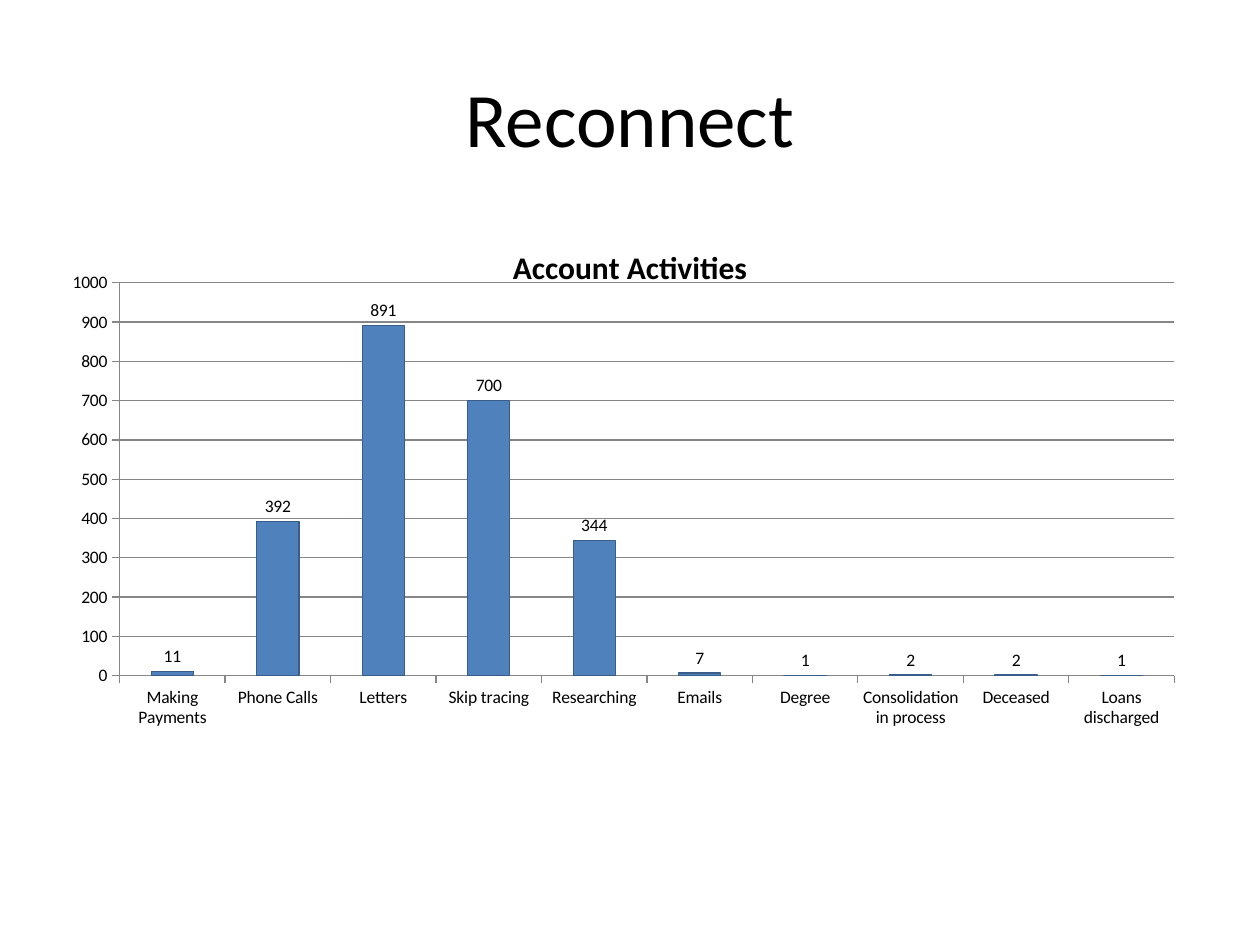
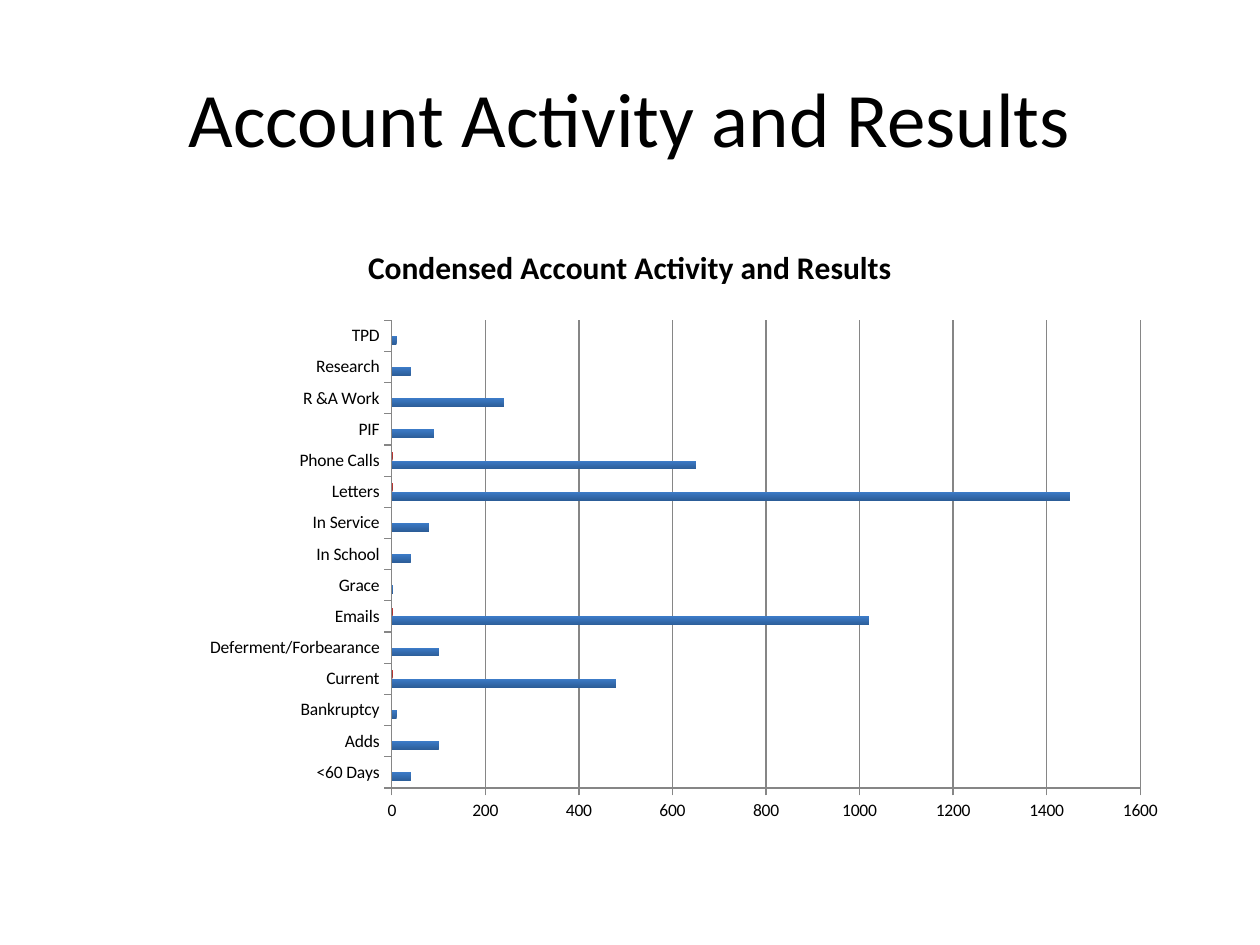
from dataclasses import dataclass

from lxml.etree import SubElement
from pptx import Presentation
from pptx.chart.chart import Chart
from pptx.chart.data import CategoryChartData
from pptx.chart.series import BarSeries
from pptx.dml.color import RGBColor
from pptx.enum.chart import XL_CHART_TYPE as ChartType
from pptx.enum.chart import XL_LABEL_POSITION as LabelPosition
from pptx.enum.chart import XL_TICK_MARK as TickMark
from pptx.enum.text import MSO_ANCHOR as Anchor
from pptx.enum.text import PP_ALIGN as Align
from pptx.oxml.ns import qn
from pptx.slide import Slide
from pptx.text.text import TextFrame
from pptx.util import Emu, Pt

EMU_PER_PX = 9144


@dataclass(frozen=True)
class Theme:
    font: str = "Calibri"
    text: RGBColor = RGBColor(0x00, 0x00, 0x00)
    axis: RGBColor = RGBColor(0x86, 0x86, 0x86)
    blue: RGBColor = RGBColor(0x4F, 0x81, 0xBD)
    blue_outline: RGBColor = RGBColor(0x38, 0x5D, 0x8A)
    blue_dark: RGBColor = RGBColor(0x2C, 0x5D, 0x98)
    blue_light: RGBColor = RGBColor(0x3C, 0x7B, 0xC7)
    red_dark: RGBColor = RGBColor(0x9B, 0x2D, 0x2A)
    red_light: RGBColor = RGBColor(0xCB, 0x3D, 0x3A)
    title_size: int = 44
    chart_title_size: int = 18
    label_size: int = 10


@dataclass(frozen=True)
class Box:
    left: int
    top: int
    width: int
    height: int

    def emu(self) -> tuple[Emu, ...]:
        lengths = (self.left, self.top, self.width, self.height)
        return tuple(Emu(length * EMU_PER_PX) for length in lengths)


@dataclass(frozen=True)
class Bars:
    name: str
    values: tuple[int, ...]
    colors: tuple[RGBColor, ...]
    outline: RGBColor | None = None
    labelled: bool = False


@dataclass(frozen=True)
class ChartSlide:
    title: str
    chart_title: str
    kind: ChartType
    categories: tuple[str, ...]
    series: tuple[Bars, ...]
    plot: tuple[float, ...]
    maximum: int
    step: int


THEME = Theme()
TITLE_BOX = Box(50, 30, 900, 125)
CHART_BOX = Box(50, 175, 900, 495)

SLIDES = (
    ChartSlide(
        "Reconnect",
        "Account Activities",
        ChartType.COLUMN_CLUSTERED,
        ("Making Payments", "Phone Calls", "Letters", "Skip tracing", "Researching",
         "Emails", "Degree", "Consolidation in process", "Deceased", "Loans discharged"),
        (Bars("Series 1", (11, 392, 891, 700, 344, 7, 1, 2, 2, 1),
              (THEME.blue,), THEME.blue_outline, True),),
        (0.05, 0.1, 0.93, 0.63),
        1000,
        100,
    ),
    ChartSlide(
        "Account Activity and Results",
        "Condensed Account Activity and Results",
        ChartType.BAR_CLUSTERED,
        ("<60 Days", "Adds", "Bankruptcy", "Current", "Deferment/Forbearance",
         "Emails", "Grace", "In School", "In Service", "Letters", "Phone Calls",
         "PIF", "R &A Work", "Research", "TPD"),
        (Bars("Series 1",
              (40, 100, 10, 480, 100, 1020, 3, 40, 80, 1450, 650, 90, 240, 40, 10),
              (THEME.blue_dark, THEME.blue_light)),
         Bars("Series 2", (0, 0, 0, 1, 0, 1, 0, 0, 0, 1, 1, 0, 0, 0, 0),
              (THEME.red_dark, THEME.red_light))),
        (0.29, 0.16, 0.66, 0.75),
        1600,
        200,
    ),
)


def write_text(frame: TextFrame, text: str, size: int, bold: bool = False) -> None:
    paragraph = frame.paragraphs[0]
    paragraph.alignment = Align.CENTER
    run = paragraph.add_run()
    run.text = text
    run.font.name = THEME.font
    run.font.size = Pt(size)
    run.font.bold = bold
    run.font.color.rgb = THEME.text


def add_title(slide: Slide, text: str) -> None:
    title = slide.shapes.title
    title.left, title.top, title.width, title.height = TITLE_BOX.emu()
    title.text_frame.vertical_anchor = Anchor.MIDDLE
    write_text(title.text_frame, text, THEME.title_size)


def place_plot(chart: Chart, plot: tuple[float, ...]) -> None:
    area = chart._chartSpace.find(".//" + qn("c:plotArea"))
    for old_layout in area.findall(qn("c:layout")):
        area.remove(old_layout)
    layout = SubElement(area, qn("c:layout"))
    area.insert(0, layout)
    manual = SubElement(layout, qn("c:manualLayout"))
    settings = [("layoutTarget", "inner"), ("xMode", "edge"), ("yMode", "edge")]
    settings += zip("xywh", map(str, plot))
    for tag, value in settings:
        SubElement(manual, qn(f"c:{tag}")).set("val", value)


def format_series(series: BarSeries, bars: Bars) -> None:
    series.invert_if_negative = False
    fill = series.format.fill
    if len(bars.colors) == 1:
        fill.solid()
        fill.fore_color.rgb = bars.colors[0]
    else:
        fill.gradient()
        fill.gradient_angle = 90
        for stop, color in zip(fill.gradient_stops, bars.colors):
            stop.color.rgb = color
    line = series.format.line
    if bars.outline is None:
        line.fill.background()
    else:
        line.color.rgb = bars.outline
        line.width = Pt(0.75)
    if bars.labelled:
        labels = series.data_labels
        labels.show_value = True
        labels.position = LabelPosition.OUTSIDE_END


def format_axes(chart: Chart, maximum: int, step: int) -> None:
    value_axis = chart.value_axis
    value_axis.minimum_scale = 0
    value_axis.maximum_scale = maximum
    value_axis.major_unit = step
    value_axis.has_major_gridlines = True
    chart.category_axis.has_major_gridlines = False
    for axis in (value_axis, chart.category_axis):
        axis.major_tick_mark = TickMark.OUTSIDE
        axis.minor_tick_mark = TickMark.NONE
    for part in (value_axis, chart.category_axis, value_axis.major_gridlines):
        part.format.line.color.rgb = THEME.axis
        part.format.line.width = Pt(0.75)


def add_chart(slide: Slide, content: ChartSlide) -> None:
    data = CategoryChartData()
    data.categories = content.categories
    for bars in content.series:
        data.add_series(bars.name, bars.values)
    chart = slide.shapes.add_chart(content.kind, *CHART_BOX.emu(), data).chart
    chart.font.name = THEME.font
    chart.font.size = Pt(THEME.label_size)
    chart.font.color.rgb = THEME.text
    chart.has_legend = False
    chart.has_title = True
    write_text(chart.chart_title.text_frame, content.chart_title,
               THEME.chart_title_size, True)
    chart.chart_title.include_in_layout = False
    plot = chart.plots[0]
    plot.gap_width = 150
    plot.overlap = 0
    plot.vary_by_categories = False
    for series, bars in zip(plot.series, content.series):
        format_series(series, bars)
    format_axes(chart, content.maximum, content.step)
    place_plot(chart, content.plot)


def main() -> None:
    presentation = Presentation()
    presentation.slide_width = Emu(1000 * EMU_PER_PX)
    presentation.slide_height = Emu(750 * EMU_PER_PX)
    title_only = presentation.slide_layouts.get_by_name("Title Only")
    for content in SLIDES:
        slide = presentation.slides.add_slide(title_only)
        add_title(slide, content.title)
        add_chart(slide, content)
    presentation.save("out.pptx")


if __name__ == "__main__":
    main()
